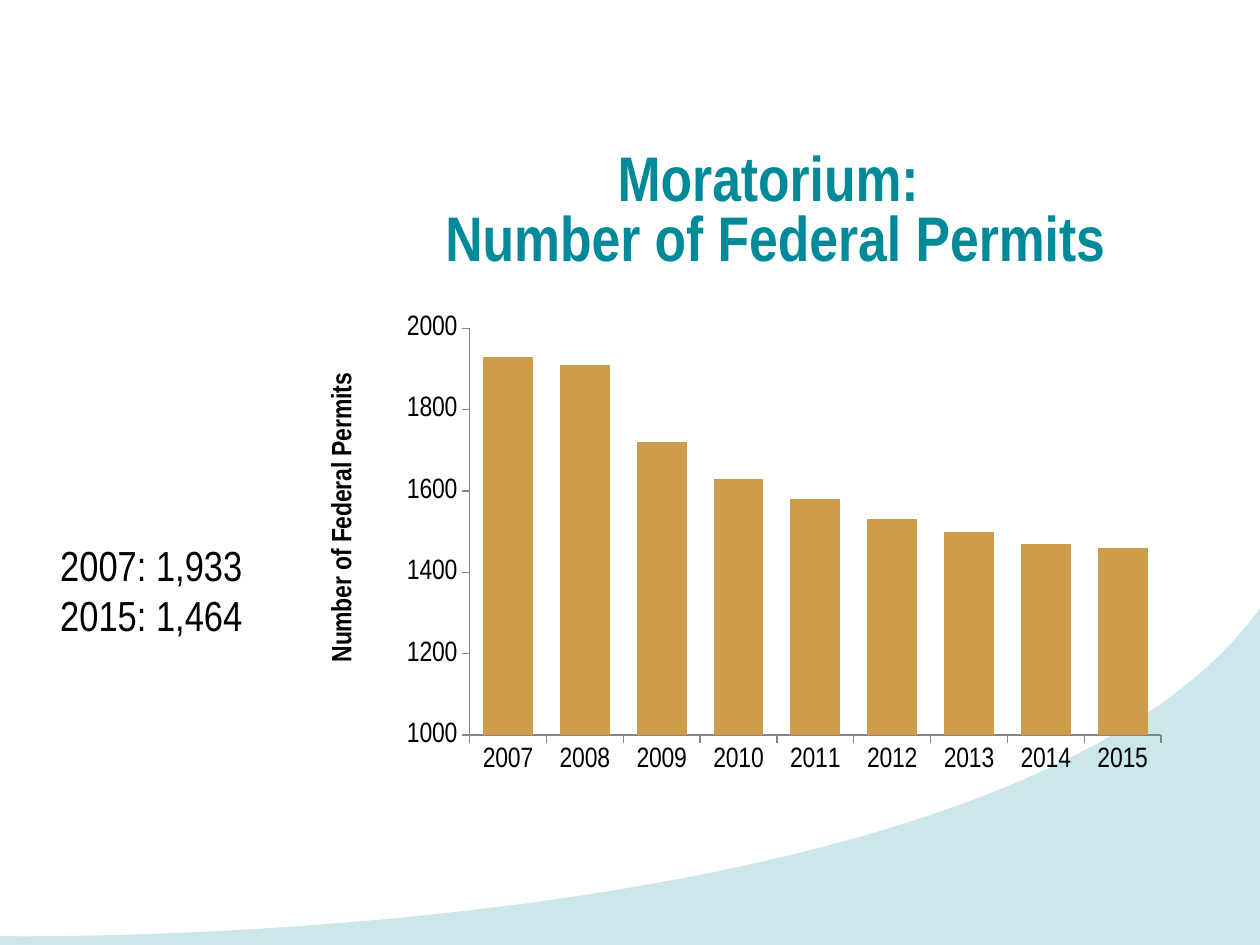
from dataclasses import dataclass

import lxml.etree
import pptx
import pptx.chart.data
import pptx.dml.color
import pptx.enum.chart
import pptx.enum.text
import pptx.oxml
import pptx.oxml.ns
import pptx.util

RGB = pptx.dml.color.RGBColor
TEAL = RGB(0x00, 0x89, 0x98)
PALE_TEAL = RGB(0xCC, 0xE7, 0xEA)
GOLD = RGB(0xCC, 0x9C, 0x4A)
GREY = RGB(0x86, 0x86, 0x86)
BLACK = RGB(0, 0, 0)
FONT = "Arial Narrow"
WIDTH, HEIGHT = 10, 7.5

PERMITS = {
    "2007": 1930, "2008": 1910, "2009": 1720, "2010": 1630, "2011": 1580,
    "2012": 1530, "2013": 1500, "2014": 1470, "2015": 1460,
}


@dataclass
class Box:
    """A frame given as shares of the slide's width and height."""
    x: float
    y: float
    w: float
    h: float

    def emu(self) -> list[int]:
        sides = (self.x * WIDTH, self.y * HEIGHT, self.w * WIDTH, self.h * HEIGHT)
        return [pptx.util.Inches(side) for side in sides]


@dataclass
class Label:
    """A text box: one paragraph per line."""
    box: Box
    lines: list[str]
    font: dict
    paragraph: dict
    wrap: bool


def set_all(target, values: dict) -> None:
    for name, value in values.items():
        setattr(target, name, value)


def set_font(font, color: RGB, **values) -> None:
    set_all(font, {"name": FONT, **values})
    font.color.rgb = color


def draw_label(s, label: Label) -> None:
    tf = s.shapes.add_textbox(*label.box.emu()).text_frame
    tf.word_wrap = label.wrap
    for i, line in enumerate(label.lines):
        p = tf.paragraphs[0] if i == 0 else tf.add_paragraph()
        p.text = line
        set_all(p, label.paragraph)
        for r in p.runs:
            set_font(r.font, **label.font)


def draw_wave(s, steps: int = 60) -> None:
    """Fill the area between a Bezier curve and the slide's lower right corner."""
    curve = [(0, 7.43), (0.02, 7.43), (8.02, 7.57), (WIDTH, 4.83)]
    points = []
    for i in range(steps + 1):
        t = i / steps
        weights = ((1 - t) ** 3, 3 * t * (1 - t) ** 2, 3 * t * t * (1 - t), t ** 3)
        points.append(tuple(sum(w * c[k] for w, c in zip(weights, curve)) for k in (0, 1)))
    points += [(WIDTH, HEIGHT), (0, HEIGHT)]
    points = [(pptx.util.Inches(x), pptx.util.Inches(y)) for x, y in points]
    builder = s.shapes.build_freeform(*points[0])
    builder.add_line_segments(points[1:], close=True)
    sp = builder.convert_to_shape()
    sp.shadow.inherit = False
    sp.fill.solid()
    sp.fill.fore_color.rgb = PALE_TEAL
    sp.line.fill.background()


def place(parent, index: int, **values) -> None:
    """Give a chart part a manual layout."""
    for old in parent.findall(pptx.oxml.ns.qn("c:layout")):
        parent.remove(old)
    layout = lxml.etree.Element(pptx.oxml.ns.qn("c:layout"))
    manual = lxml.etree.SubElement(layout, pptx.oxml.ns.qn("c:manualLayout"))
    for name, value in values.items():
        lxml.etree.SubElement(manual, pptx.oxml.ns.qn(f"c:{name}")).set("val", str(value))
    parent.insert(index, layout)


def draw_chart(s, box: Box) -> None:
    data = pptx.chart.data.CategoryChartData()
    data.categories = list(PERMITS)
    data.add_series("Number of Federal Permits", list(PERMITS.values()))
    kind = pptx.enum.chart.XL_CHART_TYPE.COLUMN_CLUSTERED
    chart = s.shapes.add_chart(kind, *box.emu(), data).chart
    set_all(chart, {"has_legend": False, "has_title": False})
    set_font(chart.font, BLACK, size=pptx.util.Pt(16))

    # Columns
    plot = chart.plots[0]
    set_all(plot, {"gap_width": 54, "vary_by_categories": False})
    fill = plot.series[0].format.fill
    fill.solid()
    fill.fore_color.rgb = GOLD

    # Axes
    for axis in (chart.category_axis, chart.value_axis):
        set_all(axis, {
            "has_major_gridlines": False,
            "major_tick_mark": pptx.enum.chart.XL_TICK_MARK.OUTSIDE,
            "minor_tick_mark": pptx.enum.chart.XL_TICK_MARK.NONE,
        })
        axis.format.line.color.rgb = GREY
        axis.format.line.width = pptx.util.Pt(0.75)
    set_all(chart.value_axis, {
        "minimum_scale": 1000, "maximum_scale": 2000, "major_unit": 200,
    })
    labels = chart.value_axis.tick_labels
    set_all(labels, {"number_format": "0", "number_format_is_linked": False})

    # Value axis title
    title = chart.value_axis.axis_title
    p = title.text_frame.paragraphs[0]
    r = p.add_run()
    r.text = "Number of Federal Permits"
    set_font(r.font, BLACK, size=pptx.util.Pt(16), bold=True)
    body = title.text_frame._txBody.find(pptx.oxml.ns.qn("a:bodyPr"))
    body.set("rot", "-5400000")
    body.set("vert", "horz")
    place(title._element, 1, xMode="edge", yMode="edge", x=0.012, y=0.135)

    # Plot area
    area = chart._chartSpace.find(".//" + pptx.oxml.ns.qn("c:plotArea"))
    place(area, 0, layoutTarget="inner", xMode="edge", yMode="edge",
          x=0.176, y=0.053, w=0.774, h=0.833)


def main() -> None:
    prs = pptx.Presentation()
    prs.slide_width = pptx.util.Inches(WIDTH)
    prs.slide_height = pptx.util.Inches(HEIGHT)
    s = prs.slides.add_slide(prs.slide_layouts[6])

    draw_wave(s)
    draw_label(s, Label(
        Box(0.248, 0.155, 0.735, 0.116),
        ["Moratorium: \vNumber of Federal Permits"],
        {"color": TEAL, "size": pptx.util.Pt(36), "bold": True},
        {"alignment": pptx.enum.text.PP_ALIGN.CENTER, "line_spacing": 0.8},
        wrap=True,
    ))
    draw_chart(s, Box(0.248, 0.32, 0.709, 0.517))
    draw_label(s, Label(
        Box(0.038, 0.564, 0.167, 0.121),
        ["2007: 1,933", "2015: 1,464"],
        {"color": BLACK, "size": pptx.util.Pt(24)},
        {"alignment": pptx.enum.text.PP_ALIGN.LEFT},
        wrap=False,
    ))
    prs.save("out.pptx")


if __name__ == "__main__":
    main()
